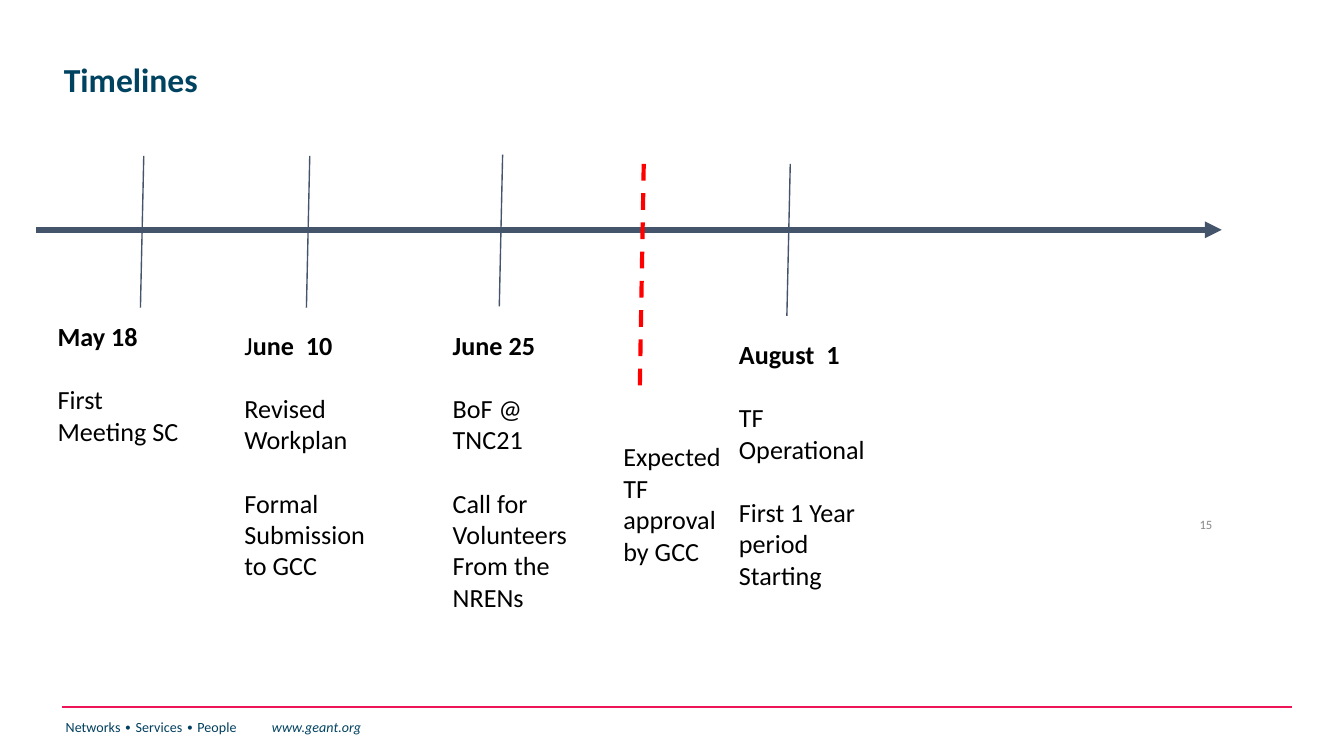
from lxml import etree
from pptx import Presentation
from pptx import util as u
from pptx.dml.color import RGBColor
from pptx.enum import dml, shapes, text
from pptx.oxml import ns

PX = 4572
COLORS = {"navy": "004361", "teal": "003F5E", "slate": "44546A", "red": "FF0000",
          "pink": "ED1556", "black": "000000", "grey": "888888"}


def px(n):
    return u.Emu(n * PX)


class Deck:
    """Hold the style and the current slide of the timeline."""

    font = "Calibri"

    def __init__(self, width, height):
        self.prs = Presentation()
        self.prs.slide_width, self.prs.slide_height = px(width), px(height)
        self.s = self.prs.slides.add_slide(self.prs.slide_layouts[5])

    def style(self, r, size, color, bold=False, italic=False):
        r.font.name, r.font.size = self.font, u.Pt(size)
        r.font.bold, r.font.italic = bold, italic
        r.font.color.rgb = RGBColor.from_string(COLORS[color])

    def title(self, words, x, y, w, h):
        sp = self.s.shapes.title
        sp.left, sp.top, sp.width, sp.height = map(px, (x, y, w, h))
        tf = sp.text_frame
        tf.text = words
        tf.auto_size = text.MSO_AUTO_SIZE.NONE
        tf.vertical_anchor = text.MSO_ANCHOR.MIDDLE
        p = tf.paragraphs[0]
        p.alignment, p.line_spacing = text.PP_ALIGN.LEFT, 0.9
        self.style(p.runs[0], 18, "navy", bold=True)

    def box(self, x, y, w, h, inset=20):
        tf = self.s.shapes.add_textbox(*map(px, (x, y, w, h))).text_frame
        tf.word_wrap = True
        tf.margin_left = tf.margin_right = px(20)
        tf.margin_top = tf.margin_bottom = px(inset)
        return tf

    def line(self, x1, y1, x2, y2, color, width, dashed=False, arrow=False):
        c = self.s.shapes.add_connector(
            shapes.MSO_CONNECTOR.STRAIGHT, *map(px, (x1, y1, x2, y2)))
        c.line.color.rgb = RGBColor.from_string(COLORS[color])
        c.line.width = u.Pt(width)
        if dashed:
            c.line.dash_style = dml.MSO_LINE.DASH
        if arrow:
            ln = c._element.spPr.find(ns.qn("a:ln"))
            etree.SubElement(ln, ns.qn("a:tailEnd"), type="triangle")
        etree.SubElement(c._element.spPr, ns.qn("a:effectLst"))

    def event(self, x, y, w, h, date, notes, plain=0):
        tf = self.box(x, y, w, h)
        p = tf.paragraphs[0]
        for part, bold in ((date[:plain], False), (date[plain:], True)):
            if part:
                r = p.add_run()
                r.text = part
                self.style(r, 14, "black", bold=bold)
        for words in notes:
            p = tf.add_paragraph()
            p.space_before = u.Pt(17)
            self.note(p, words)

    def note(self, p, words):
        p.text = words
        for r in p.runs:
            self.style(r, 14, "black")

    def footer(self, motto, site):
        self.line(93, 1052, 1923, 1052, "pink", 1)
        p = self.box(78, 1060, 682, 70, inset=10).paragraphs[0]
        tabs = etree.SubElement(p._p.get_or_add_pPr(), ns.qn("a:tabLst"))
        etree.SubElement(tabs, ns.qn("a:tab"), pos=str(px(307)), algn="l")
        for words, color, italic in ((motto + "\t", "teal", False), (site, "navy", True)):
            r = p.add_run()
            r.text = words
            self.style(r, 7.5, color, italic=italic)

    def number(self, n):
        tf = self.box(1702, 758, 122, 46, inset=10)
        tf.text = str(n)
        tf.vertical_anchor = text.MSO_ANCHOR.MIDDLE
        p = tf.paragraphs[0]
        p.alignment = text.PP_ALIGN.RIGHT
        self.style(p.runs[0], 6.8, "grey")


def main():
    d = Deck(2000, 1125)
    d.footer("Networks ∙ Services ∙ People", "www.geant.org")
    d.number(15)
    d.title("Timelines", 75, 12, 1576, 218)
    d.line(54, 342, 1818, 342, "slate", 3, arrow=True)
    for x, y in ((214, 232), (461, 232), (748, 230), (1176, 244)):
        d.line(x, y, x - 5, y + 226, "slate", 0.75)
    d.event(66, 457, 230, 228, "May 18", ["First\vMeeting SC"])
    d.event(344, 470, 230, 418, "June  10",
            ["Revised\vWorkplan", "Formal\vSubmission\vto GCC"], plain=1)
    d.event(654, 470, 230, 464, "June 25",
            ["BoF @ TNC21", "Call for\vVolunteers\vFrom the NRENs"])
    d.event(1080, 484, 288, 418, "August  1",
            ["TF\vOperational", "First 1 Year period\vStarting"])
    d.line(958, 244, 952, 584, "red", 2.25, dashed=True)
    d.note(d.box(908, 636, 188, 228).paragraphs[0],
           "Expected\vTF\vapproval\vby GCC")
    d.prs.save("out.pptx")


if __name__ == "__main__":
    main()
